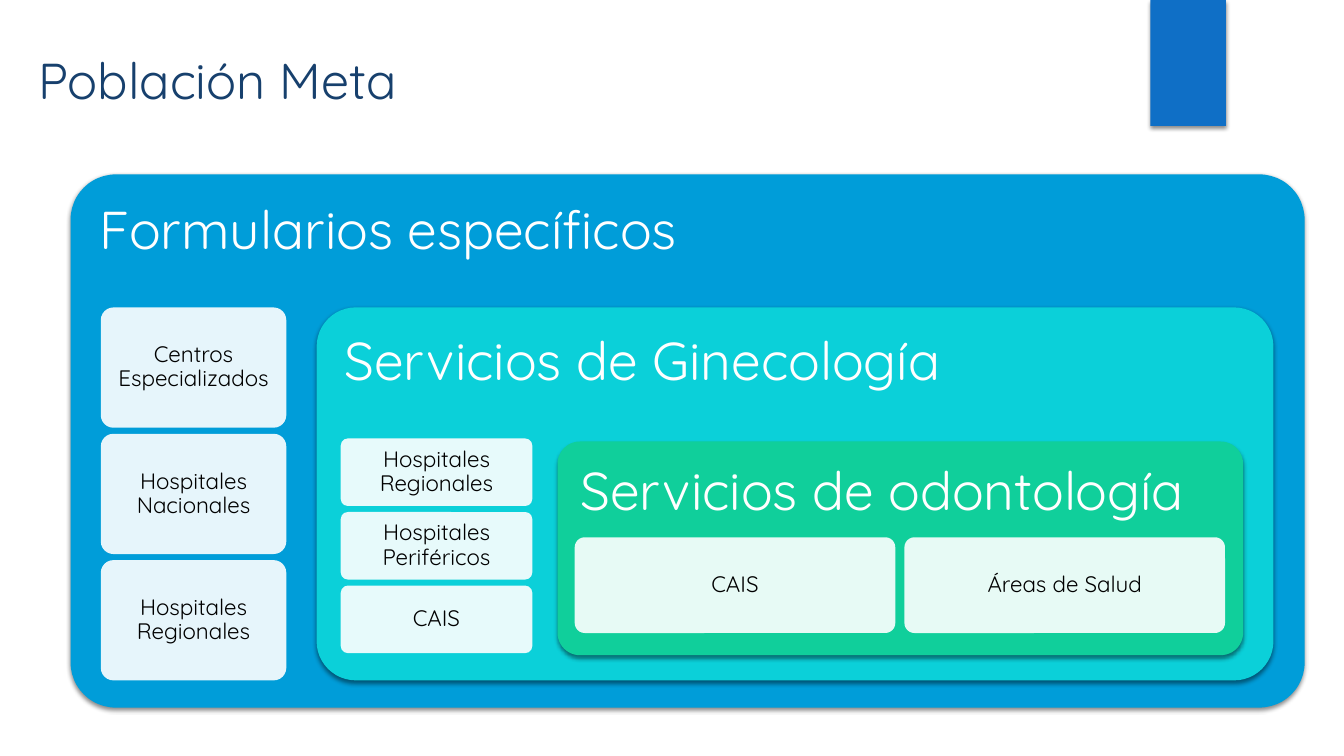
from lxml import etree
from pptx import Presentation
from pptx.dml.color import RGBColor
from pptx.enum.shapes import MSO_SHAPE as Shape
from pptx.enum.text import MSO_ANCHOR as Anchor, MSO_AUTO_SIZE as AutoSize, PP_ALIGN as Align
from pptx.oxml import parse_xml
from pptx.oxml.ns import qn
from pptx.util import Inches, Pt

FONT = "Quicksand"
TITLE = "Población Meta"
TITLE_BOX = (0.28, 0.48, 9.65, 0.62)
RIBBON_BOX = (11.41, 0, 0.75, 1.25)

# Nested panels, outermost first; "grid" is the area shared out among the cells
PANELS = [
    {"heading": "Formularios específicos", "fill": "009DD9", "corner": 0.085,
     "box": (0.7, 1.73, 12.24, 5.29), "grid": (1, 3.05, 1.84, 3.7),
     "columns": 1, "gap": 0.06,
     "cells": ["Centros Especializados", "Hospitales Nacionales", "Hospitales Regionales"]},
    {"heading": "Servicios de Ginecología", "fill": "0BD0D9", "corner": 0.105,
     "box": (3.14, 3.05, 9.49, 3.7), "grid": (3.38, 4.35, 1.9, 2.13),
     "columns": 1, "gap": 0.06,
     "cells": ["Hospitales Regionales", "Hospitales Periféricos", "CAIS"]},
    {"heading": "Servicios de odontología", "fill": "10CF9B", "corner": 0.105,
     "box": (5.53, 4.38, 6.8, 2.12), "grid": (5.7, 5.33, 6.45, 0.95),
     "columns": 2, "gap": 0.09,
     "cells": ["CAIS", "Áreas de Salud"]},
]

SHADOW = (
    '<a:outerShdw xmlns:a="http://schemas.openxmlformats.org/drawingml/2006/main" '
    f'blurRad="{Pt(3)}" dist="{Pt(2)}" dir="5400000" algn="ctr" rotWithShape="0">'
    '<a:srgbClr val="000000"><a:alpha val="45000"/></a:srgbClr></a:outerShdw>'
)


def color(hex_value):
    return RGBColor.from_string(hex_value)


def add_block(slide, kind, box, fill, corner=None, shadow=False, opacity=100):
    shape = slide.shapes.add_shape(kind, *map(Inches, box))
    shape.fill.solid()
    shape.fill.fore_color.rgb = color(fill)
    shape.line.fill.background()
    shape.shadow.inherit = False
    if corner:
        shape.adjustments[0] = corner
    properties = shape._element.spPr
    if shadow:
        properties.find(qn("a:effectLst")).append(parse_xml(SHADOW))
    if opacity < 100:
        fill_color = properties.find(qn("a:solidFill")).find(qn("a:srgbClr"))
        etree.SubElement(fill_color, qn("a:alpha"), val=str(opacity * 1000))
    return shape


def write(shape, text, size, hex_value, align, anchor, inset=None, spacing=None):
    frame = shape.text_frame
    frame.text = text
    frame.word_wrap = True
    frame.auto_size = AutoSize.NONE
    frame.vertical_anchor = anchor
    if inset is not None:
        frame.margin_left = frame.margin_right = Inches(inset)
        frame.margin_top = frame.margin_bottom = Inches(inset)
    paragraph = frame.paragraphs[0]
    paragraph.alignment = align
    if spacing:
        paragraph.line_spacing = spacing
    font = paragraph.runs[0].font
    font.name, font.size, font.color.rgb = FONT, Pt(size), color(hex_value)


def grid_boxes(area, columns, count, gap):
    """Yield equal boxes that fill the area, row by row."""
    left, top, width, height = area
    rows = -(-count // columns)
    cell_width = (width - gap * (columns - 1)) / columns
    cell_height = (height - gap * (rows - 1)) / rows
    for index in range(count):
        row, column = divmod(index, columns)
        yield (left + column * (cell_width + gap), top + row * (cell_height + gap),
               cell_width, cell_height)


def add_panel(slide, panel):
    shape = add_block(slide, Shape.ROUNDED_RECTANGLE, panel["box"], panel["fill"],
                      panel["corner"], shadow=True)
    write(shape, panel["heading"], 38, "FFFFFF", Align.LEFT, Anchor.TOP, 0.16, 0.9)
    cells = panel["cells"]
    boxes = grid_boxes(panel["grid"], panel["columns"], len(cells), panel["gap"])
    for text, box in zip(cells, boxes):
        cell = add_block(slide, Shape.ROUNDED_RECTANGLE, box, "FFFFFF", 0.105, opacity=90)
        write(cell, text, 16, "000000", Align.CENTER, Anchor.MIDDLE, 0.07, 0.9)


def main():
    presentation = Presentation()
    presentation.slide_width, presentation.slide_height = Inches(13.33), Inches(7.5)
    slide = presentation.slides.add_slide(presentation.slide_layouts[5])
    add_block(slide, Shape.RECTANGLE, RIBBON_BOX, "0F6FC6", shadow=True)
    title = slide.shapes.title
    title.left, title.top, title.width, title.height = map(Inches, TITLE_BOX)
    write(title, TITLE, 36, "17406D", Align.LEFT, Anchor.MIDDLE)
    for panel in PANELS:
        add_panel(slide, panel)
    presentation.save("out.pptx")


if __name__ == "__main__":
    main()
